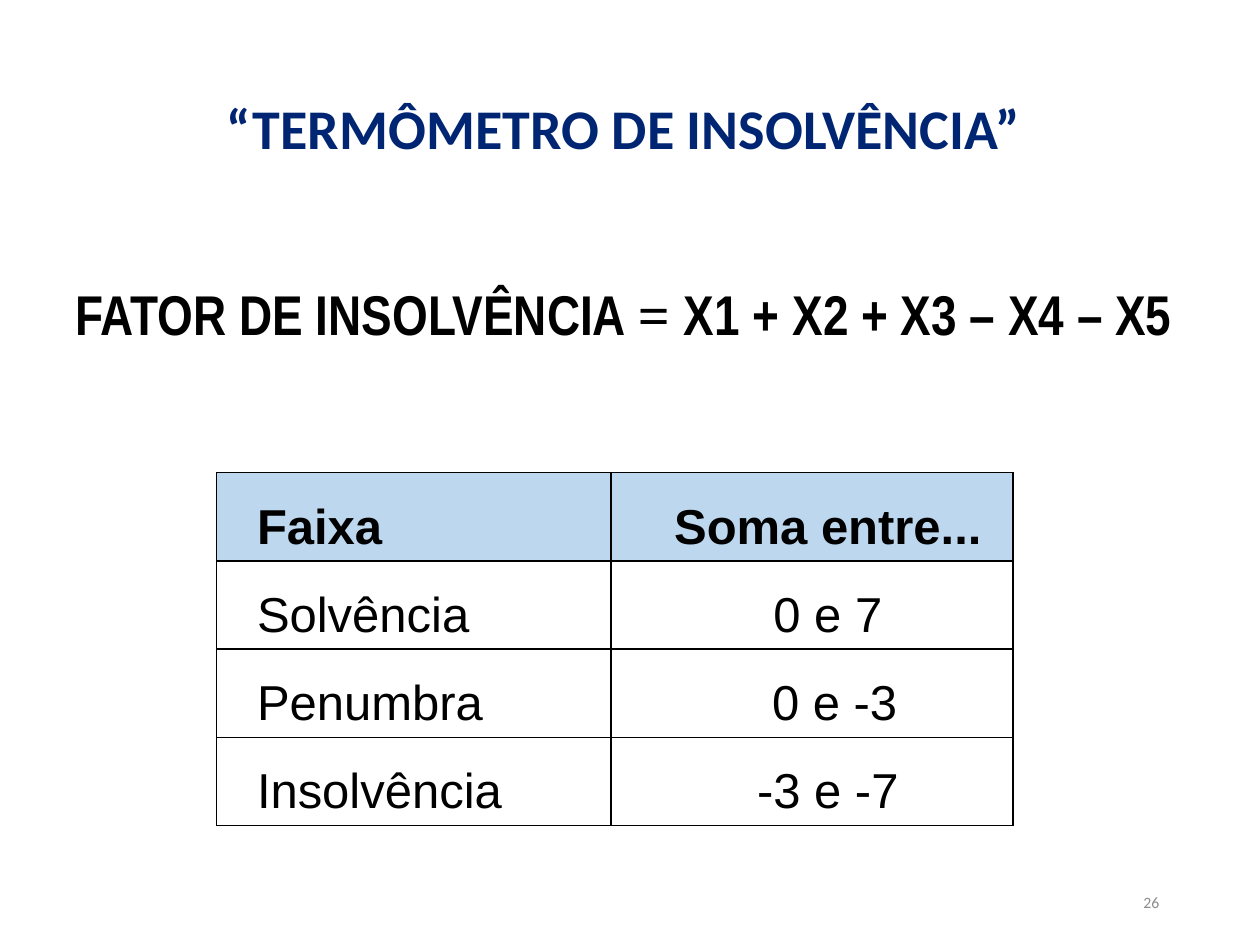
from lxml import etree
from pptx import Presentation, util as u
from pptx.dml.color import RGBColor
from pptx.enum import text
from pptx.oxml import ns

NAVY = RGBColor(0x00, 0x26, 0x73)
BLACK = RGBColor(0, 0, 0)
WHITE = RGBColor(255, 255, 255)
GREY = RGBColor(0x8C, 0x8C, 0x8C)
PALE = RGBColor(0xBD, 0xD7, 0xEE)

ALIGN = text.PP_ALIGN
WIDE, HIGH = 10, 7.5
COLS = [3.13, 3.19]
ROW = 0.65
BANDS = [
    ("Faixa", "Soma entre..."),
    ("Solvência", "0 e 7"),
    ("Penumbra", " 0 e -3"),
    ("Insolvência", "-3 e -7"),
]


def style(font, size, color, name=None, bold=False):
    font.size, font.bold = u.Pt(size), bold
    font.color.rgb = color
    if name:
        font.name = name


def add_box(slide, left, top, width, height):
    """Add a wrapping text box placed by shares of the slide."""
    box = slide.shapes.add_textbox(
        u.Inches(left * WIDE), u.Inches(top * HIGH),
        u.Inches(width * WIDE), u.Inches(height * HIGH))
    box.text_frame.word_wrap = True
    return box.text_frame


def set_gaps(para, before):
    para.alignment = ALIGN.CENTER
    para.line_spacing = 0.9
    para.space_before, para.space_after = u.Pt(before), u.Pt(12)


def add_border(cell):
    """Draw a thin black line on all four sides of a cell."""
    props = cell._tc.get_or_add_tcPr()
    for spot, side in enumerate(("lnL", "lnR", "lnT", "lnB")):
        line = etree.Element(ns.qn("a:" + side), w=str(u.Pt(1)))
        fill = etree.SubElement(line, ns.qn("a:solidFill"))
        etree.SubElement(fill, ns.qn("a:srgbClr"), val=str(BLACK))
        props.insert(spot, line)


def fill_cell(cell, words, align, head):
    cell.margin_left = cell.margin_right = u.Inches(0.07)
    cell.margin_top = cell.margin_bottom = 0
    cell.fill.solid()
    cell.fill.fore_color.rgb = PALE if head else WHITE
    add_border(cell)
    para = cell.text_frame.paragraphs[0]
    para.text = words
    para.alignment, para.line_spacing = align, 1.5
    para._p.get_or_add_pPr().set("marL", str(u.Inches(0.25)))
    style(para.font, 28, BLACK, "Arial", head)


def add_bands(slide, left, top):
    frame = slide.shapes.add_table(
        len(BANDS), len(COLS), u.Inches(left), u.Inches(top),
        u.Inches(sum(COLS)), u.Inches(ROW * len(BANDS)))
    table = frame.table
    for col, width in zip(table.columns, COLS):
        col.width = u.Inches(width)
    for r, band in enumerate(BANDS):
        table.rows[r].height = u.Inches(ROW)
        for c, align in enumerate((ALIGN.JUSTIFY, ALIGN.CENTER)):
            fill_cell(table.cell(r, c), band[c], align, r == 0)


def main():
    deck = Presentation()
    deck.slide_width, deck.slide_height = u.Inches(WIDE), u.Inches(HIGH)
    slide = deck.slides.add_slide(deck.slide_layouts[6])

    # Title and formula
    frame = add_box(slide, 0.04, 0.1, 0.91, 0.81)
    title = frame.paragraphs[0]
    title.text = "“TERMÔMETRO DE INSOLVÊNCIA”"
    set_gaps(title, 6)
    style(title.font, 32, NAVY, "Calibri", True)

    rule = frame.add_paragraph()
    set_gaps(rule, 60)
    style(rule.font, 32, BLACK, bold=True)
    for words, name in (("FATOR DE INSOLVÊNCIA ", "Arial Narrow"),
                        ("= ", "Times New Roman"),
                        ("X1 + X2 + X3 – X4 – X5", "Arial Narrow")):
        run = rule.add_run()
        run.text, run.font.name = words, name

    # Table of ranges
    add_bands(slide, 1.72, 3.75)

    # Slide number
    frame = add_box(slide, 0.71, 0.93, 0.22, 0.05)
    frame.vertical_anchor = text.MSO_ANCHOR.MIDDLE
    para = frame.paragraphs[0]
    para.text, para.alignment = "26", ALIGN.RIGHT
    style(para.font, 9, GREY, "Calibri")

    deck.save("out.pptx")


if __name__ == "__main__":
    main()
